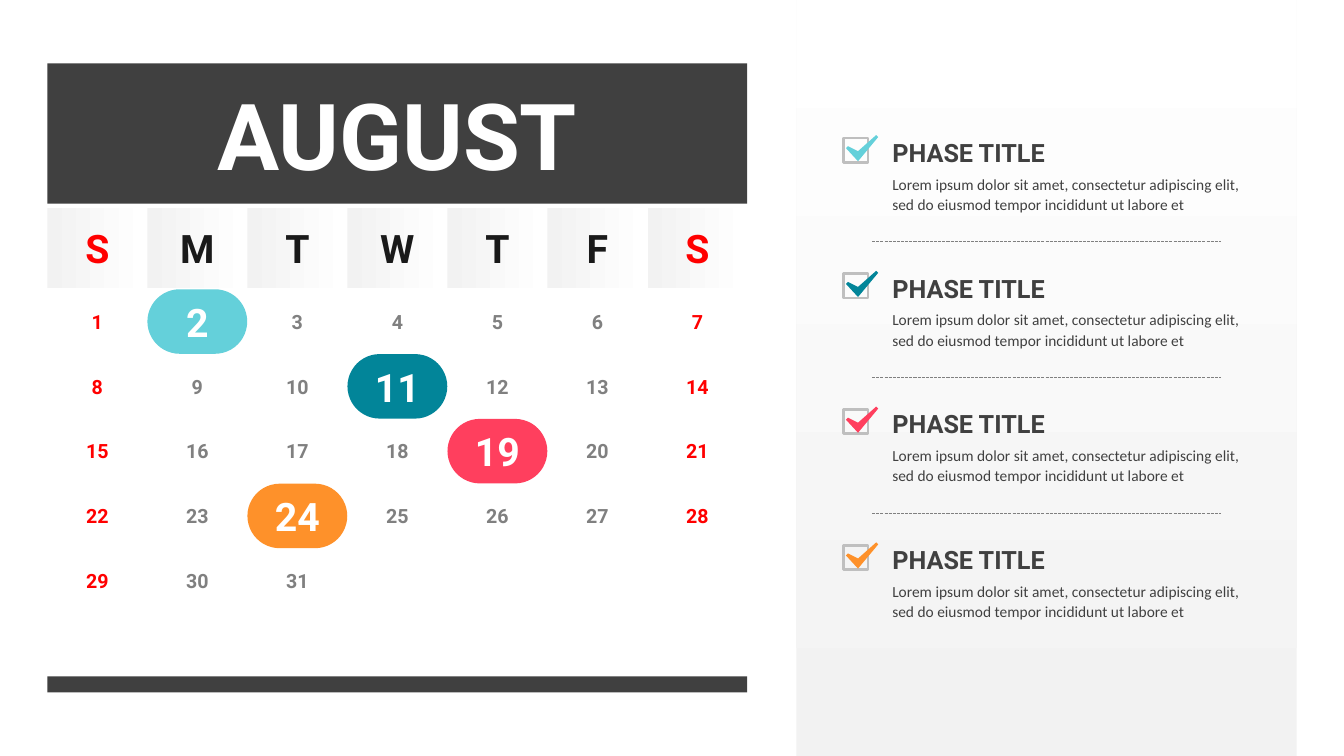
from lxml import etree
from pptx import Presentation
from pptx import util as u
from pptx.dml.color import RGBColor
from pptx.enum import dml, shapes, text
from pptx.oxml.ns import qn

DARK, GREY, RED, WHITE = "404040", "808080", "FF0000", "FFFFFF"
LEFT, WIDE, HIGH = 0.47, 0.99, 0.64
COL, ROW, STEP = 0.992, 0.643, 1.347
MARKS = {2: "64D0DA", 11: "028599", 19: "FF3F5E", 24: "FE912A"}
TICK = [(8.69, 1.34), (8.71, 1.36), (8.51, 1.6), (8.39, 1.47), (8.41, 1.45), (8.51, 1.5)]
LOREM = ("Lorem ipsum dolor sit amet, consectetur adipiscing elit, "
         "sed do eiusmod tempor incididunt ut labore et")


def rgb(code):
    return RGBColor.from_string(code)


def box(*sizes):
    return [u.Inches(size) for size in sizes]


def paint(shape, code):
    shape.fill.solid()
    shape.fill.fore_color.rgb = rgb(code)


def fade(shape, angle):
    shape.fill.gradient()
    shape.fill.gradient_angle = angle
    for stop, code in zip(shape.fill.gradient_stops, ("F2F2F2", WHITE)):
        stop.color.rgb = rgb(code)


def plain(shape):
    shape.shadow.inherit = False
    shape.line.fill.background()
    return shape


def block(parent, area, kind=shapes.MSO_SHAPE.RECTANGLE):
    return plain(parent.add_shape(kind, *box(*area)))


def style(para, size, code, face="Roboto", bold=True):
    font = para.font
    font.name, font.size, font.bold = face, u.Pt(size), bold
    font.color.rgb = rgb(code)


def frame(shape, anchor):
    body = shape.text_frame
    body.margin_left = body.margin_top = body.margin_right = body.margin_bottom = 0
    body.word_wrap = True
    body.vertical_anchor = anchor
    return body


def label(shape, words, size, code):
    body = frame(shape, text.MSO_ANCHOR.MIDDLE)
    body.auto_size = text.MSO_AUTO_SIZE.NONE
    body.text = words
    para = body.paragraphs[0]
    para.alignment = text.PP_ALIGN.CENTER
    style(para, size, code)


def month(slide, words):
    title = slide.shapes.title
    title.left, title.top, title.width, title.height = box(LEFT, 0.63, 6.94, 1.39)
    paint(title, DARK)
    label(title, words, 66, WHITE)


def weekdays(parent):
    for col, name in enumerate("SMTWTFS"):
        head = block(parent, (LEFT + col * COL, 2.06, WIDE, 0.8))
        fade(head, 0)
        label(head, name, 28, RED if col in (0, 6) else "1A1A1A")


def days(parent):
    for day in range(1, 32):
        row, col = divmod(day - 1, 7)
        area = (LEFT + col * COL, 2.87 + row * ROW, WIDE, HIGH)
        if day in MARKS:
            cell = block(parent, area, shapes.MSO_SHAPE.ROUNDED_RECTANGLE)
            cell.adjustments[0] = 0.5
            paint(cell, MARKS[day])
            label(cell, str(day), 28, WHITE)
        else:
            cell = parent.add_textbox(*box(*area))
            label(cell, str(day), 14, RED if col in (0, 6) else GREY)


def check(parent, drop, code):
    square = block(parent, (8.37, 1.37 + drop, 0.24, 0.24))
    square.fill.background()
    square.line.color.rgb = rgb("BFBFBF")
    square.line.width = u.Pt(2)
    points = [box(x, y + drop) for x, y in TICK]
    pen = parent.build_freeform(*points[0])
    pen.add_line_segments(points[1:], close=True)
    paint(plain(pen.convert_to_shape()), code)


def phase(parent, drop):
    body = frame(parent.add_textbox(*box(8.85, 1.33 + drop, 3.54, 0.8)), text.MSO_ANCHOR.TOP)
    body.auto_size = text.MSO_AUTO_SIZE.SHAPE_TO_FIT_TEXT
    body.text = "PHASE TITLE\n" + LOREM
    for para in body.paragraphs:
        para.line_spacing = 1.1
        para.space_before = u.Pt(4)
    style(body.paragraphs[0], 18, DARK)
    style(body.paragraphs[1], 11, DARK, "Calibri", False)


def rule(parent, y):
    line = parent.add_connector(shapes.MSO_CONNECTOR.STRAIGHT, *box(8.65, y, 12.11, y))
    line.line.color.rgb = rgb(GREY)
    line.line.width = u.Pt(0.75)
    line.line.dash_style = dml.MSO_LINE.SQUARE_DOT
    etree.SubElement(line._element.spPr, qn("a:effectLst"))


def main():
    deck = Presentation()
    deck.slide_width, deck.slide_height = box(13.33, 7.5)
    slide = deck.slides.add_slide(deck.slide_layouts[5])
    items = slide.shapes
    month(slide, "AUGUST")
    grid = items.add_group_shape().shapes
    weekdays(grid)
    days(grid)
    paint(block(grid, (LEFT, 6.71, 6.94, 0.16)), DARK)
    fade(block(items, (7.9, 0, 4.96, 7.5)), 90)
    for index, code in enumerate(MARKS.values()):
        drop = index * STEP
        check(items.add_group_shape().shapes, drop, code)
        phase(items, drop)
        if index < len(MARKS) - 1:
            rule(items, 2.4 + drop)
    deck.save("out.pptx")


if __name__ == "__main__":
    main()
